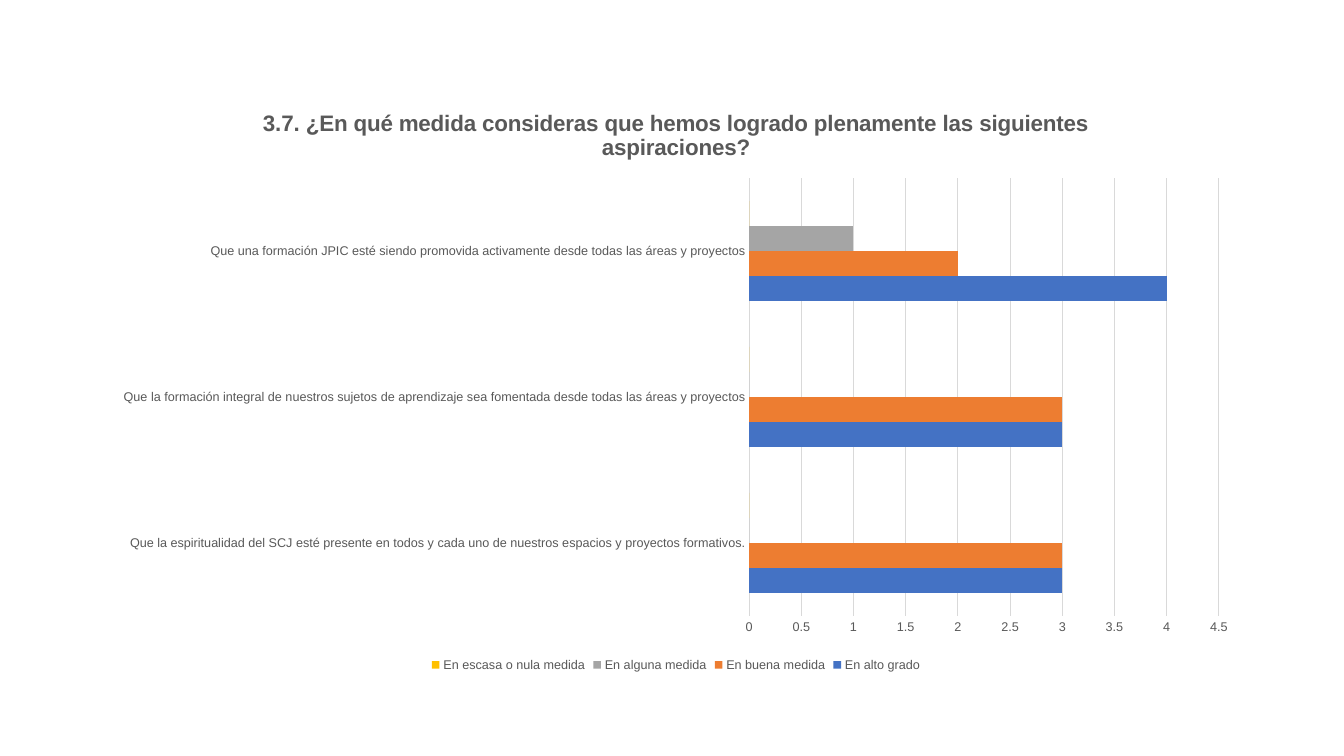
from lxml.etree import SubElement
from pptx import Presentation
from pptx.chart.data import CategoryChartData
from pptx.dml.color import RGBColor
from pptx.enum.chart import XL_CHART_TYPE, XL_LEGEND_POSITION, XL_TICK_MARK
from pptx.oxml.ns import qn
from pptx.util import Inches, Pt

TEXT_GREY = RGBColor(0x59, 0x59, 0x59)
LINE_GREY = RGBColor(0xD9, 0xD9, 0xD9)
BLUE = RGBColor(0x44, 0x72, 0xC4)
ORANGE = RGBColor(0xED, 0x7D, 0x31)
GREY = RGBColor(0xA5, 0xA5, 0xA5)
YELLOW = RGBColor(0xFF, 0xC0, 0x00)

TITLE = ("3.7. ¿En qué medida consideras que hemos logrado plenamente "
         "las siguientes aspiraciones?")
ASPIRATIONS = [
    "Que la espiritualidad del SCJ esté presente en todos y cada uno de "
    "nuestros espacios y proyectos formativos.",
    "Que la formación integral de nuestros sujetos de aprendizaje sea "
    "fomentada desde todas las áreas y proyectos",
    "Que una formación JPIC esté siendo promovida activamente desde todas "
    "las áreas y proyectos",
]
ANSWERS = [
    ("En alto grado", (3, 3, 4), BLUE),
    ("En buena medida", (3, 3, 2), ORANGE),
    ("En alguna medida", (0, 0, 1), GREY),
    ("En escasa o nula medida", (0, 0, 0), YELLOW),
]


class SlideBuilder:
    """Holds the style and the current slide; lengths are shares of its size."""

    font_name = "Arial"

    def __init__(self, presentation):
        self.width = presentation.slide_width
        self.height = presentation.slide_height
        self.slide = presentation.slides.add_slide(presentation.slide_layouts[6])

    def style_font(self, font, size=9, bold=False):
        font.name = self.font_name
        font.size = Pt(size)
        font.bold = bold
        font.color.rgb = TEXT_GREY

    def style_line(self, line):
        line.color.rgb = LINE_GREY
        line.width = Pt(0.75)

    def add_bar_chart(self, left, top, width, height, categories, answers):
        data = CategoryChartData()
        data.categories = categories
        for name, values, _ in answers:
            data.add_series(name, values)
        chart = self.slide.shapes.add_chart(
            XL_CHART_TYPE.BAR_CLUSTERED,
            int(left * self.width), int(top * self.height),
            int(width * self.width), int(height * self.height), data).chart
        chart.font.name = self.font_name
        chart.font.size = Pt(10)

        # Bars
        plot = chart.plots[0]
        plot.gap_width = 182
        plot.vary_by_categories = False
        for series, (_, _, color) in zip(plot.series, answers):
            series.format.fill.solid()
            series.format.fill.fore_color.rgb = color
        return chart

    def add_title(self, chart, text):
        frame = chart.chart_title.text_frame
        frame.text = text
        self.style_font(frame.paragraphs[0].runs[0].font, 16, True)
        chart.chart_title.include_in_layout = False

    def format_axes(self, chart):
        for axis in (chart.category_axis, chart.value_axis):
            axis.major_tick_mark = axis.minor_tick_mark = XL_TICK_MARK.NONE
            self.style_font(axis.tick_labels.font)
        self.style_line(chart.category_axis.format.line)
        values = chart.value_axis
        values.minimum_scale, values.maximum_scale = 0, 4.5
        values.major_unit = 0.5
        values.format.line.fill.background()
        self.style_line(values.major_gridlines.format.line)

    def add_legend(self, chart):
        chart.has_legend = True
        chart.legend.position = XL_LEGEND_POSITION.BOTTOM
        chart.legend.include_in_layout = False
        self.style_font(chart.legend.font)

    def place_plot(self, chart, **shares):
        """Place the inner plot area, in shares of the chart."""
        plot_area = chart.plots[0]._element.getparent()
        for layout in plot_area.findall(qn("c:layout")):
            plot_area.remove(layout)
        layout = SubElement(plot_area, qn("c:layout"))
        plot_area.insert(0, layout)
        manual = SubElement(layout, qn("c:manualLayout"))
        settings = {"layoutTarget": "inner", "xMode": "edge", "yMode": "edge"}
        for name, value in {**settings, **shares}.items():
            SubElement(manual, qn(f"c:{name}")).set("val", str(value))


def main():
    presentation = Presentation()
    presentation.slide_width = Inches(13.33)
    presentation.slide_height = Inches(7.5)
    builder = SlideBuilder(presentation)

    # Survey chart
    chart = builder.add_bar_chart(
        1 / 13.33, 0.87 / 7.5, 11.41 / 13.33, 5.84 / 7.5, ASPIRATIONS, ANSWERS)
    builder.add_title(chart, TITLE)
    builder.format_axes(chart)
    builder.add_legend(chart)

    # Room for the long category labels
    builder.place_plot(chart, x=6.43 / 11.41, y=0.9 / 5.84,
                       w=4.66 / 11.41, h=4.34 / 5.84)
    presentation.save("out.pptx")


if __name__ == "__main__":
    main()
